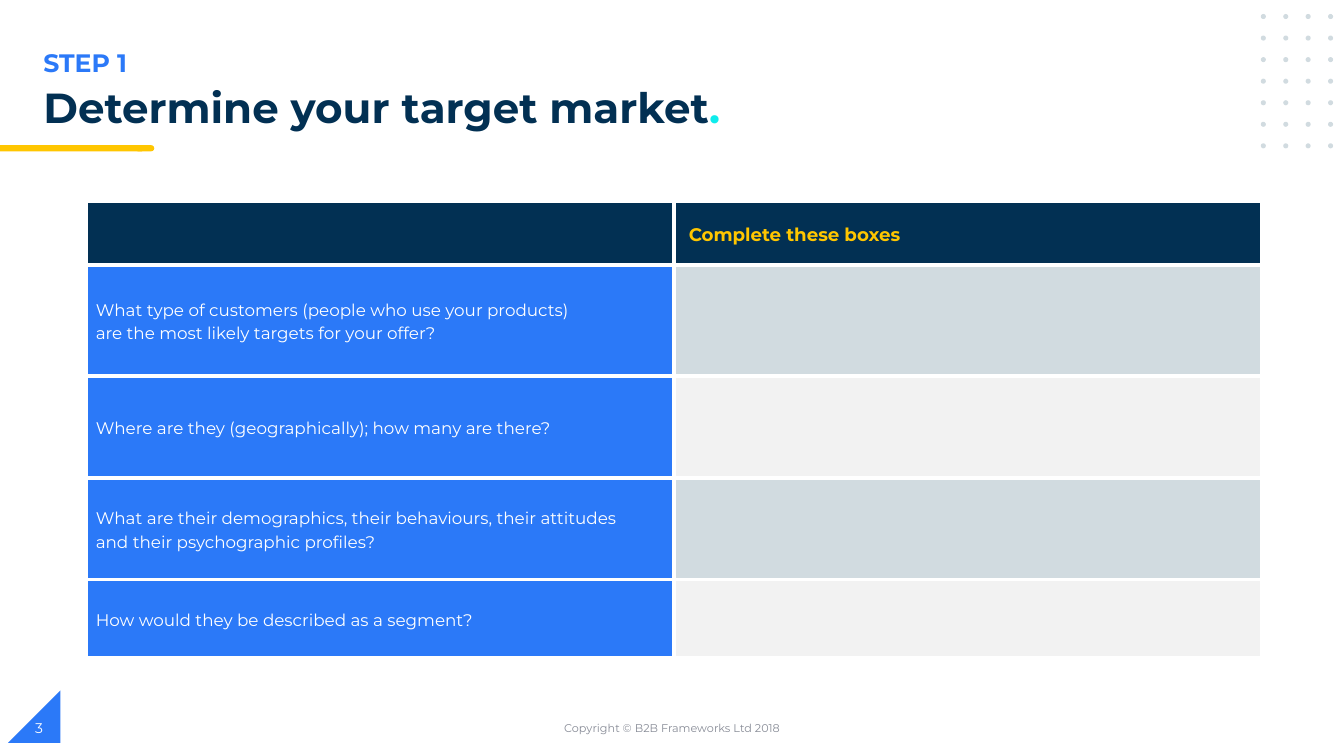
import pptx
import pptx.util
import pptx.dml.color
import pptx.enum.shapes
import pptx.enum.text
import pptx.oxml
import pptx.oxml.ns
from dataclasses import dataclass

Pt = pptx.util.Pt
Shape = pptx.enum.shapes.MSO_SHAPE
Anchor = pptx.enum.text.MSO_ANCHOR
Align = pptx.enum.text.PP_ALIGN

STEP = "STEP 1"
TITLE = ("Determine your target market", ".")
HEAD = "Complete these boxes"
ROWS = [
    ("What type of customers (people who use your products)\n"
     "are the most likely targets for your offer?", 79.2),
    ("Where are they (geographically); how many are there?", 72.7),
    ("What are their demographics, their behaviours, their attitudes\n"
     "and their psychographic profiles?", 72.7),
    ("How would they be described as a segment?", 56.2),
]
FOOTER = "Copyright © B2B Frameworks Ltd 2018"
NUMBER = "3"


@dataclass(frozen=True)
class Theme:
    font: str = "Montserrat"
    navy: str = "023053"
    blue: str = "2B79F8"
    gold: str = "FFC600"
    cyan: str = "0EECEC"
    mist: str = "D1DBE0"
    pale: str = "F2F2F2"
    grey: str = "888C97"
    white: str = "FFFFFF"
    title: float = 30
    step: float = 18
    head: float = 13
    body: float = 12
    number: float = 10
    footer: float = 8


theme = Theme()


def color(code):
    return pptx.dml.color.RGBColor.from_string(code)


def style(run, size, code, bold=False):
    run.font.name = theme.font
    run.font.size = Pt(size)
    run.font.bold = bold
    run.font.color.rgb = color(code)


def add_mark(slide, kind, left, top, width, height, code):
    mark = slide.shapes.add_shape(kind, Pt(left), Pt(top), Pt(width), Pt(height))
    mark.shadow.inherit = False
    mark.fill.solid()
    mark.fill.fore_color.rgb = color(code)
    mark.line.fill.background()
    return mark


def add_label(slide, text, place, size, code, bold=False, align=Align.LEFT):
    frame = slide.shapes.add_textbox(*map(Pt, place)).text_frame
    frame.word_wrap = True
    frame.vertical_anchor = Anchor.MIDDLE
    frame.text = text
    frame.paragraphs[0].alignment = align
    style(frame.paragraphs[0].runs[0], size, code, bold)


def add_title(slide):
    title = slide.shapes.title
    title.left, title.top, title.width, title.height = map(Pt, (23.8, 59, 559, 29))
    frame = title.text_frame
    frame.auto_size = pptx.enum.text.MSO_AUTO_SIZE.NONE
    frame.vertical_anchor = Anchor.TOP
    line = frame.paragraphs[0]
    line.alignment = Align.LEFT
    line.line_spacing = 0.9
    for text, code in zip(TITLE, (theme.navy, theme.cyan)):
        run = line.add_run()
        run.text = text
        style(run, theme.title, code, True)


def add_edges(cell):
    """Draw a white 3 pt border round the cell, placed before its fill."""
    props = cell._tc.get_or_add_tcPr()
    for spot, side in enumerate(("lnL", "lnR", "lnT", "lnB")):
        props.insert(spot, pptx.oxml.parse_xml(
            f'<a:{side} {pptx.oxml.ns.nsdecls("a")} w="{Pt(3)}"><a:solidFill>'
            f'<a:srgbClr val="{theme.white}"/></a:solidFill></a:{side}>'))


def fill_cell(cell, text, back, size, code, bold=False, inset=7.2):
    cell.fill.solid()
    cell.fill.fore_color.rgb = color(back)
    add_edges(cell)
    cell.vertical_anchor = Anchor.MIDDLE
    cell.margin_left, cell.margin_right = Pt(inset), Pt(7.2)
    cell.margin_top = cell.margin_bottom = 0
    cell.text_frame.text = text
    for line in cell.text_frame.paragraphs:
        line.line_spacing = 1.15
        for run in line.runs:
            style(run, size, code, bold)


def add_form(slide):
    tall = [45.4] + [height for _, height in ROWS]
    table = slide.shapes.add_table(
        len(tall), 2, Pt(61.2), Pt(144), Pt(840), Pt(sum(tall))).table
    for row, height in zip(table.rows, tall):
        row.height = Pt(height)
    fill_cell(table.cell(0, 0), "", theme.navy, theme.head, theme.gold)
    fill_cell(table.cell(0, 1), HEAD, theme.navy, theme.head, theme.gold, True, 10.8)
    for num, (text, _) in enumerate(ROWS, 1):
        back = theme.mist if num % 2 else theme.pale
        fill_cell(table.cell(num, 0), text, theme.blue, theme.body, theme.white)
        fill_cell(table.cell(num, 1), "", back, theme.body, theme.navy)


def main():
    deck = pptx.Presentation()
    deck.slide_width, deck.slide_height = Pt(960), Pt(540)
    slide = deck.slides.add_slide(deck.slide_layouts[5])

    corner = add_mark(slide, Shape.RIGHT_TRIANGLE, 5.8, 493.2, 37.4, 37.4, theme.blue)
    corner._element.spPr.xfrm.set("flipH", "1")
    add_mark(slide, Shape.FLOWCHART_TERMINATOR, 96.5, 103.7, 13.7, 4.4, theme.gold)
    add_mark(slide, Shape.RECTANGLE, 0, 103.7, 101.5, 4.4, theme.gold)
    for row in range(7):
        for col in range(4):
            add_mark(slide, Shape.OVAL, 900.6 + 16 * col, 10 + 15.4 * row,
                     3.6, 3.6, theme.mist)

    add_label(slide, STEP, (23.8, 30.2, 481.7, 28.8), theme.step, theme.blue, True)
    add_title(slide)
    add_form(slide)
    add_label(slide, FOOTER, (318.2, 505.4, 324, 28.8), theme.footer, theme.grey,
              align=Align.CENTER)
    add_label(slide, NUMBER, (18, 505.4, 216, 28.8), theme.number, theme.white)
    deck.save("out.pptx")


if __name__ == "__main__":
    main()
